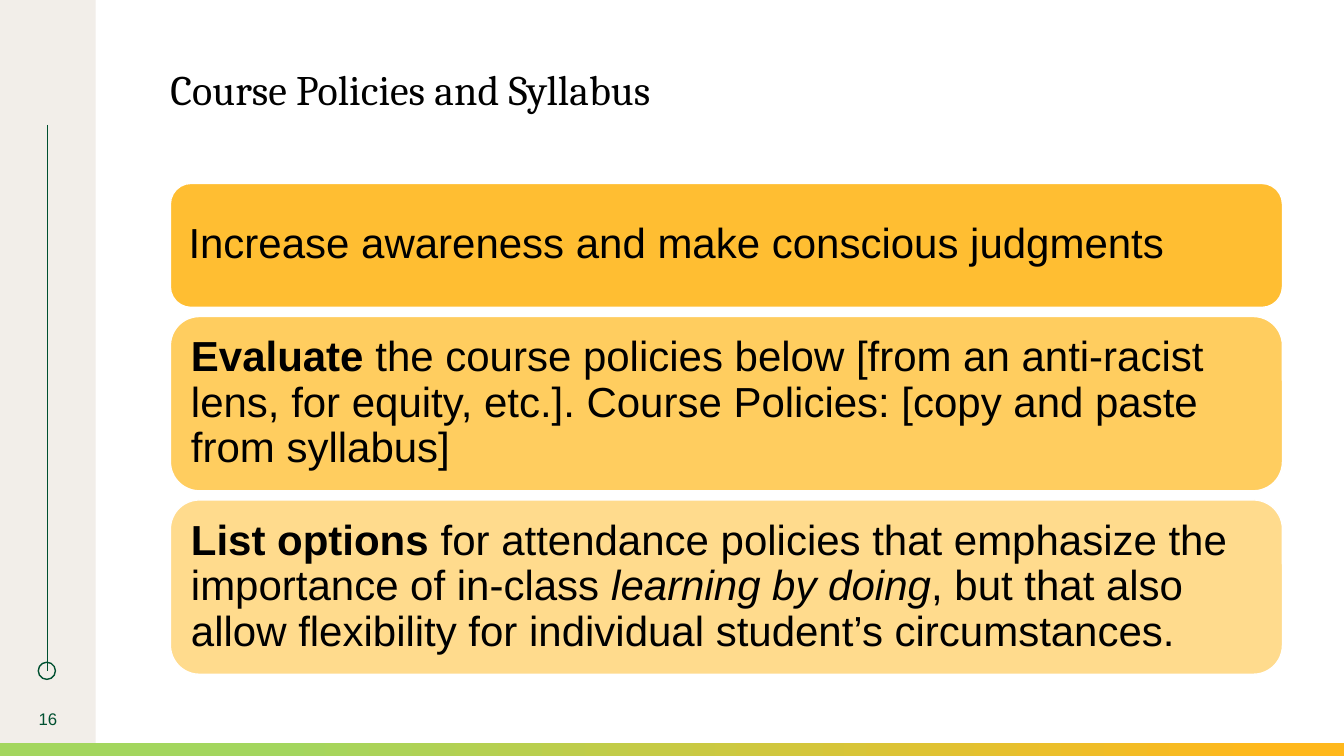
from lxml import etree
from pptx import Presentation
from pptx.dml.color import RGBColor
from pptx.enum.shapes import MSO_CONNECTOR, MSO_SHAPE
from pptx.enum.text import MSO_ANCHOR, PP_ALIGN
from pptx.oxml.ns import qn
from pptx.util import Pt

RECT, ROUNDED, OVAL = MSO_SHAPE.RECTANGLE, MSO_SHAPE.ROUNDED_RECTANGLE, MSO_SHAPE.OVAL
STRAIGHT = MSO_CONNECTOR.STRAIGHT
TOP, MIDDLE = MSO_ANCHOR.TOP, MSO_ANCHOR.MIDDLE
LEFT, CENTER = PP_ALIGN.LEFT, PP_ALIGN.CENTER

PX = 9144  # EMU per px, 100 px to the inch
COLORS = {"sand": "F2EEE9", "forest": "005030", "gold": "FFB81C",
          "lime": "A3D65E", "black": "000000", "white": "FFFFFF"}


def rgb(name):
    return RGBColor.from_string(COLORS[name])


class SlideBuilder:
    def __init__(self, slide, heading_font="Cambria", body_font="Arial"):
        self.slide = slide
        self.heading_font = heading_font
        self.body_font = body_font

    def shape(self, kind, box, fill=None, line=None, opacity=100):
        shape = self.slide.shapes.add_shape(kind, *(v * PX for v in box))
        shape.shadow.inherit = False
        if fill:
            shape.fill.solid()
            shape.fill.fore_color.rgb = rgb(fill)
            if opacity < 100:
                color = shape._element.spPr.find(
                    qn("a:solidFill") + "/" + qn("a:srgbClr"))
                etree.SubElement(color, qn("a:alpha"), val=str(opacity * 1000))
        else:
            shape.fill.background()
        if line:
            shape.line.color.rgb = rgb(line)
            shape.line.width = Pt(1)
        else:
            shape.line.fill.background()
        return shape

    def gradient(self, box, stops, angle):
        band = self.shape(RECT, box)
        band.fill.gradient()
        band.fill.gradient_angle = angle
        for stop, (position, color) in zip(band.fill.gradient_stops, stops):
            stop.position = position
            stop.color.rgb = rgb(color)

    def line(self, start, end, color):
        line = self.slide.shapes.add_connector(
            STRAIGHT, *(v * PX for v in start + end))
        line.line.color.rgb = rgb(color)
        line.line.width = Pt(1)
        etree.SubElement(line._element.spPr, qn("a:effectLst"))

    def add_runs(self, shape, runs, size, font, color="black", inset=0,
                 anchor=MIDDLE, align=LEFT, spacing=0.9):
        frame = shape.text_frame
        frame.word_wrap = True
        frame.vertical_anchor = anchor
        frame.margin_left = frame.margin_right = inset * PX
        frame.margin_top = frame.margin_bottom = inset * PX
        paragraph = frame.paragraphs[0]
        paragraph.alignment = align
        paragraph.line_spacing = spacing
        for text, style in runs:
            run = paragraph.add_run()
            run.text = text
            run.font.name = font
            run.font.size = Pt(size)
            run.font.color.rgb = rgb(color)
            run.font.bold = style == "bold"
            run.font.italic = style == "italic"

    def text(self, box, text, size, font, **style):
        label = self.slide.shapes.add_textbox(*(v * PX for v in box))
        self.add_runs(label, [(text, "plain")], size, font, **style)

    def card(self, box, runs, opacity):
        card = self.shape(ROUNDED, box, "gold", "white", opacity)
        self.add_runs(card, runs, 30, self.body_font, inset=12)


POLICY_CARDS = [  # height, opacity, runs
    (123, 90, [("Increase awareness and make conscious judgments", "plain")]),
    (173, 70, [
        ("Evaluate", "bold"),
        (" the course policies below [from an anti-racist lens, for equity, "
         "etc.]. Course Policies: [copy and paste from syllabus]", "plain")]),
    (173, 50, [
        ("List options ", "bold"),
        ("for attendance policies that emphasize the importance of in-class ",
         "plain"),
        ("learning by doing", "italic"),
        (", but that also allow flexibility for individual student’s "
         "circumstances.", "plain")]),
]


def main():
    deck = Presentation()
    deck.slide_width, deck.slide_height = 1333 * PX, 750 * PX
    page = SlideBuilder(deck.slides.add_slide(deck.slide_layouts[6]))

    # Side panel and bottom band
    page.shape(RECT, (0, 0, 95, 750), "sand")
    page.line((47, 124), (47, 666), "forest")
    page.shape(OVAL, (38, 657, 17, 17), line="forest")
    page.gradient((0, 737, 1333, 13), [(0.05, "gold"), (0.79, "lime")], 180)

    # Title and page number
    page.text((169, 69, 641, 91), "Course Policies and Syllabus", 30,
              page.heading_font, anchor=TOP)
    page.text((0, 693, 95, 40), "16", 12, page.body_font,
              color="forest", align=CENTER, spacing=1.0)

    # Policy cards, stacked with equal gaps
    card_top, card_gap = 182, 9
    for height, opacity, runs in POLICY_CARDS:
        page.card((169, card_top, 1103, height), runs, opacity)
        card_top += height + card_gap

    deck.save("out.pptx")


if __name__ == "__main__":
    main()
